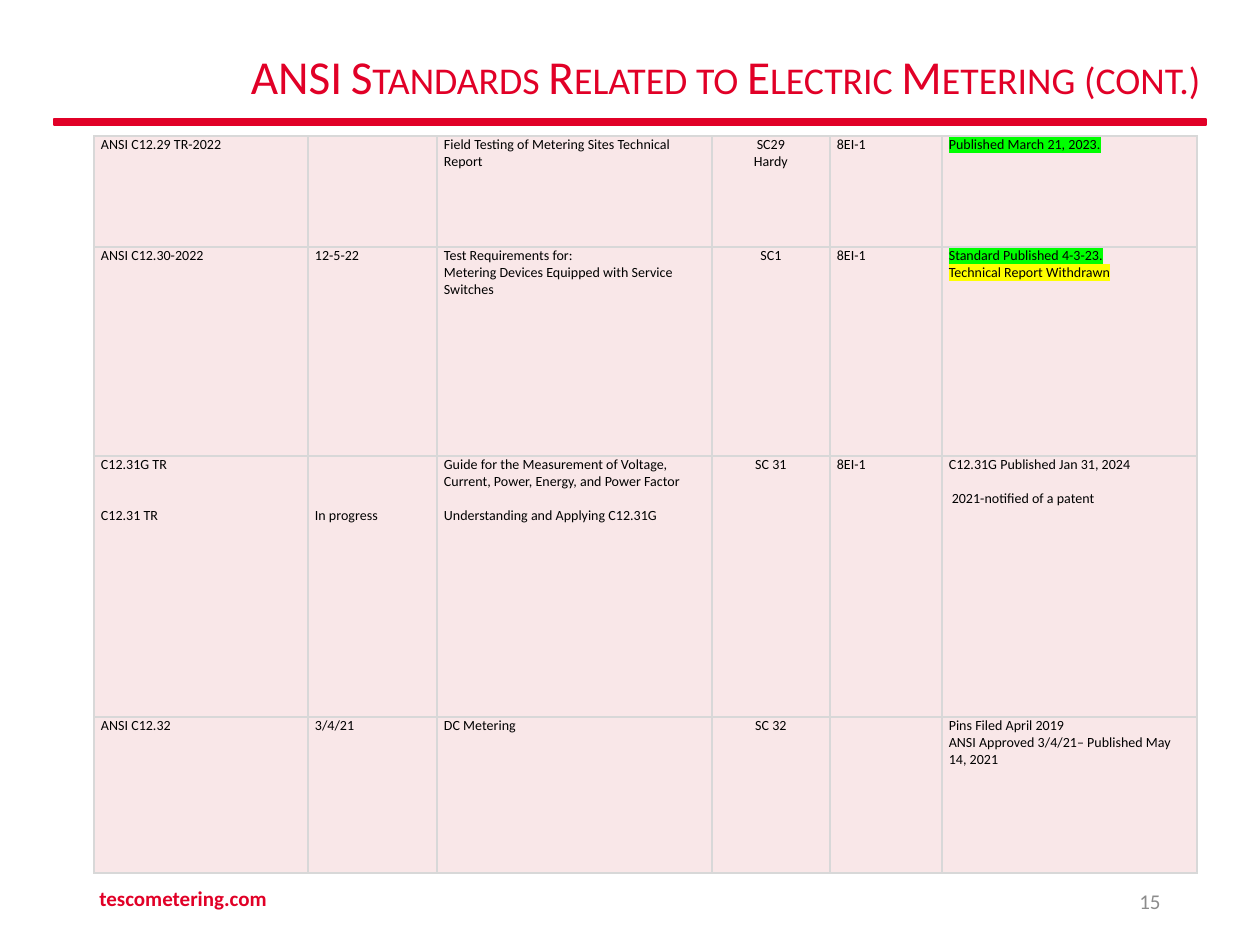
import pptx
import pptx.util
import pptx.dml.color
import pptx.enum.shapes
import pptx.enum.text
import pptx.oxml
import pptx.oxml.ns
from dataclasses import dataclass
from typing import Any, Optional

RGBColor = pptx.dml.color.RGBColor
Align = pptx.enum.text.PP_ALIGN
Anchor = pptx.enum.text.MSO_ANCHOR

RED = RGBColor(0xE1, 0x00, 0x27)
GRAY = RGBColor(0x8C, 0x8C, 0x8C)
BLACK = RGBColor(0x00, 0x00, 0x00)
PINK = RGBColor(0xF9, 0xE7, 0xE8)
BORDER = RGBColor(0xD8, 0xD8, 0xD8)
GREEN = RGBColor(0x00, 0xFF, 0x00)
YELLOW = RGBColor(0xFF, 0xFF, 0x00)
FONT = "Calibri"
PX_PER_INCH = 126
LINE = 17
CENTERED_COLUMN = 3


@dataclass(frozen=True)
class Entry:
    text: str
    highlight: Optional[RGBColor] = None
    lines_before: int = 0
    indent: int = 0


@dataclass(frozen=True)
class Label:
    text: str
    left: int
    top: int
    width: int
    height: int
    color: RGBColor
    align: Any
    bold: bool = False


COLUMN_WIDTHS = (214, 129, 275, 118, 112, 255)
ROW_HEIGHTS = (111, 209, 261, 156)
STANDARDS: tuple[tuple[tuple[Entry, ...], ...], ...] = (
    (
        (Entry("ANSI C12.29 TR-2022"),),
        (),
        (Entry("Field Testing of Metering Sites Technical Report"),),
        (Entry("SC29"), Entry("Hardy")),
        (Entry("8EI-1"),),
        (Entry("Published March 21, 2023.", GREEN),),
    ),
    (
        (Entry("ANSI C12.30-2022"),),
        (Entry("12-5-22"),),
        (
            Entry("Test Requirements for:"),
            Entry("Metering Devices Equipped with Service Switches"),
        ),
        (Entry("SC1"),),
        (Entry("8EI-1"),),
        (
            Entry("Standard Published 4-3-23.", GREEN),
            Entry("Technical Report Withdrawn", YELLOW),
        ),
    ),
    (
        (Entry("C12.31G TR"), Entry("C12.31 TR", lines_before=2)),
        (Entry("In progress", lines_before=3),),
        (
            Entry("Guide for the Measurement of Voltage, Current, Power, Energy, and Power Factor"),
            Entry("Understanding and Applying C12.31G", lines_before=1),
        ),
        (Entry("SC 31"),),
        (Entry("8EI-1"),),
        (
            Entry("C12.31G Published Jan 31, 2024"),
            Entry("2021-notified of a patent", lines_before=1, indent=3),
        ),
    ),
    (
        (Entry("ANSI C12.32"),),
        (Entry("3/4/21"),),
        (Entry("DC Metering"),),
        (Entry("SC 32"),),
        (),
        (
            Entry("Pins Filed April 2019"),
            Entry("ANSI Approved 3/4/21– Published May 14, 2021"),
        ),
    ),
)
LABELS = (
    Label("tescometering.com", 87, 873, 426, 50, RED, Align.LEFT, True),
    Label("15", 890, 876, 283, 50, GRAY, Align.RIGHT),
)


def px(length: int) -> pptx.util.Emu:
    return pptx.util.Emu(round(length * 914400 / PX_PER_INCH))


def add_span(para: Any, text: str, size: int, color: RGBColor, bold: bool = False) -> Any:
    span = para.add_run()
    span.text = text
    span.font.name = FONT
    span.font.size = pptx.util.Pt(size)
    span.font.bold = bold
    span.font.color.rgb = color
    return span


def add_highlight(span: Any, color: RGBColor) -> None:
    fill = span.font._element.find(pptx.oxml.ns.qn("a:solidFill"))
    fill.addnext(pptx.oxml.parse_xml(
        f'<a:highlight {pptx.oxml.ns.nsdecls("a")}><a:srgbClr val="{color}"/></a:highlight>'
    ))


def add_borders(cell: Any) -> None:
    properties = cell._tc.get_or_add_tcPr()
    for side in ("lnL", "lnR", "lnT", "lnB"):
        properties.append(pptx.oxml.parse_xml(
            f'<a:{side} {pptx.oxml.ns.nsdecls("a")} w="12700"><a:solidFill>'
            f'<a:srgbClr val="{BORDER}"/></a:solidFill></a:{side}>'
        ))


def fill_cell(cell: Any, entries: tuple[Entry, ...], align: Any) -> None:
    add_borders(cell)
    cell.fill.solid()
    cell.fill.fore_color.rgb = PINK
    cell.margin_left = cell.margin_right = px(7)
    cell.margin_top = px(entries[0].lines_before * LINE if entries else 0)
    cell.margin_bottom = 0
    cell.vertical_anchor = Anchor.TOP
    for index, entry in enumerate(entries):
        para = cell.text_frame.add_paragraph() if index else cell.text_frame.paragraphs[0]
        para.alignment = align
        if index and entry.lines_before:
            para.space_before = px(entry.lines_before * LINE)
        if entry.indent:
            para._p.get_or_add_pPr().set("marL", str(px(entry.indent)))
        span = add_span(para, entry.text, 8, BLACK)
        if entry.highlight is not None:
            add_highlight(span, entry.highlight)


def add_standards_table(page: Any) -> None:
    frame = page.shapes.add_table(
        len(ROW_HEIGHTS), len(COLUMN_WIDTHS), px(94), px(136),
        px(sum(COLUMN_WIDTHS)), px(sum(ROW_HEIGHTS)),
    )
    table = frame.table
    table.first_row = table.horz_banding = False
    for column, width in zip(table.columns, COLUMN_WIDTHS):
        column.width = px(width)
    for row, height, standard in zip(table.rows, ROW_HEIGHTS, STANDARDS):
        row.height = px(height)
        for index, (cell, entries) in enumerate(zip(row.cells, standard)):
            fill_cell(cell, entries, Align.CENTER if index == CENTERED_COLUMN else Align.LEFT)


def add_rule(page: Any) -> None:
    rule = page.shapes.add_shape(
        pptx.enum.shapes.MSO_SHAPE.RECTANGLE, px(54), px(119), px(1152), px(6)
    )
    rule.shadow.inherit = False
    rule.fill.solid()
    rule.fill.fore_color.rgb = RED
    rule.line.color.rgb = RED
    rule.line.width = pptx.util.Pt(1)


def set_title(page: Any) -> None:
    title = page.shapes.title
    title.left, title.top, title.width, title.height = px(157), px(33), px(1056), px(93)
    box = title.text_frame
    box.word_wrap = True
    box.auto_size = pptx.enum.text.MSO_AUTO_SIZE.NONE
    box.vertical_anchor = Anchor.MIDDLE
    para = box.paragraphs[0]
    para.alignment = Align.RIGHT
    para.line_spacing = 0.9
    span = add_span(para, "ANSI Standards Related to Electric Metering (cont.)", 27, RED)
    span.font._element.set("cap", "small")


def add_label(page: Any, label: Label) -> None:
    box = page.shapes.add_textbox(
        px(label.left), px(label.top), px(label.width), px(label.height)
    ).text_frame
    box.word_wrap = True
    box.vertical_anchor = Anchor.MIDDLE
    para = box.paragraphs[0]
    para.alignment = label.align
    add_span(para, label.text, 12, label.color, label.bold)


def main() -> None:
    deck = pptx.Presentation()
    deck.slide_width, deck.slide_height = px(1260), px(945)
    page = deck.slides.add_slide(deck.slide_layouts[5])
    add_rule(page)
    set_title(page)
    for label in LABELS:
        add_label(page, label)
    add_standards_table(page)
    deck.save("out.pptx")


if __name__ == "__main__":
    main()
